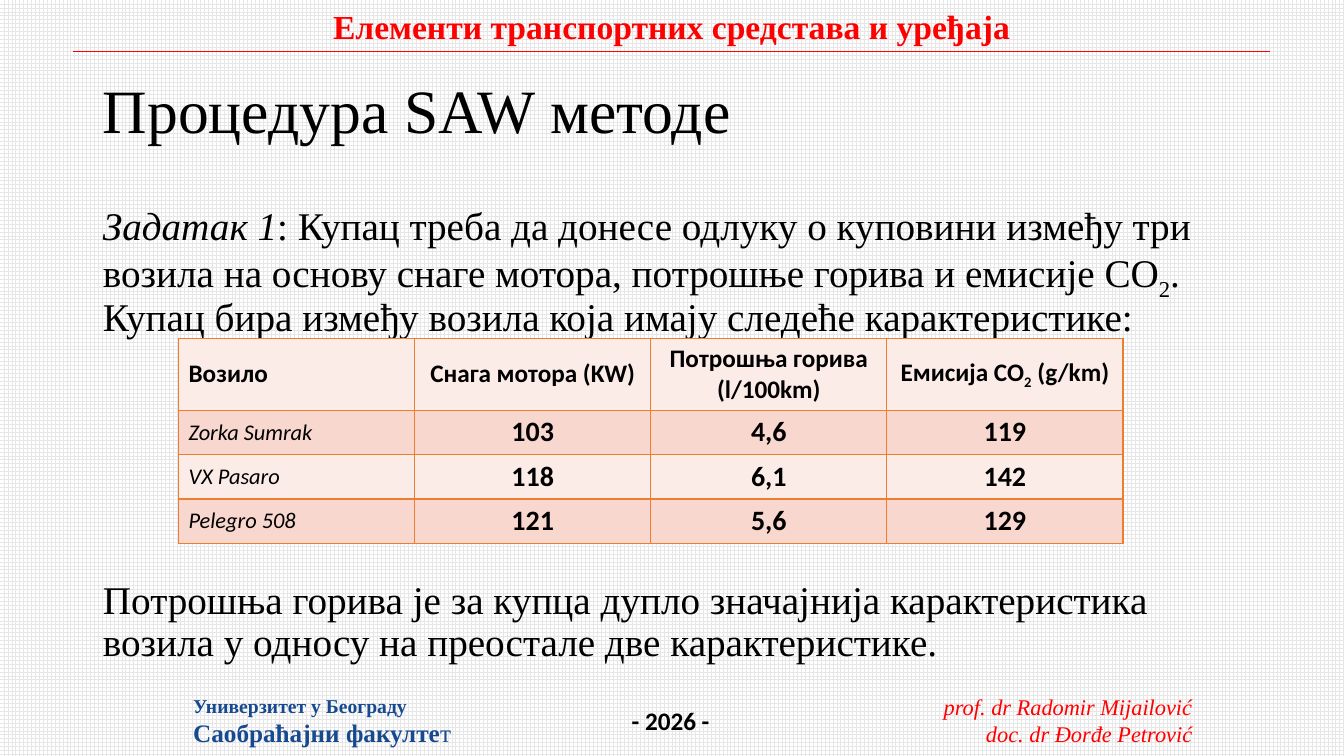
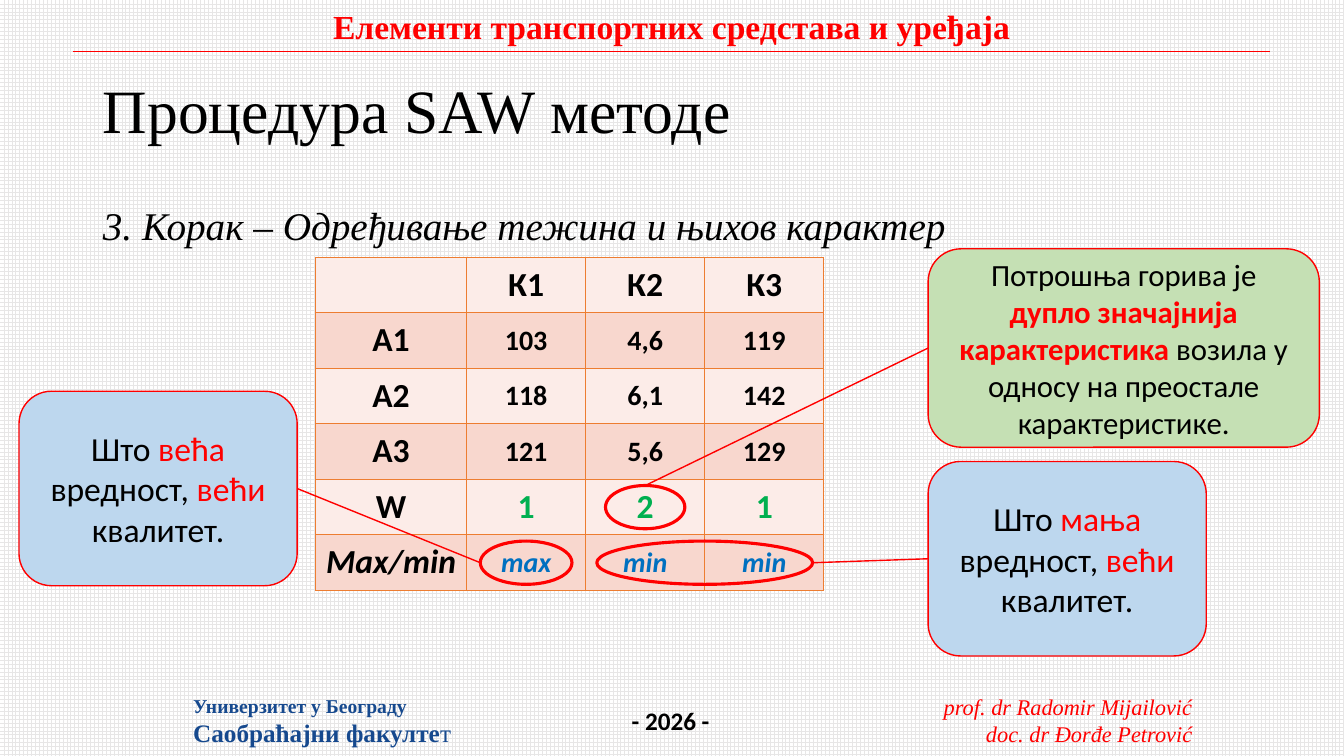
from lxml import etree
from pptx import Presentation
from pptx.dml.color import RGBColor
from pptx.enum import dml, shapes as sh, text as tx
from pptx.oxml.ns import qn
from pptx.util import Cm, Pt

HUE = {
    "black": "000000", "white": "FFFFFF", "grid": "E7E6E6", "red": "FF0000",
    "navy": "16498E", "orange": "ED7D31", "pale": "FCECE8", "peach": "F8D7CE",
    "mint": "C5E0B4", "sky": "BDD7EE", "green": "00B050", "blue": "0070C0",
}
SERIF, SANS = "Times New Roman", "Calibri"
LEFT, MID, RIGHT = tx.PP_ALIGN.LEFT, tx.PP_ALIGN.CENTER, tx.PP_ALIGN.RIGHT


def hue(name):
    """Return the named colour."""
    return RGBColor.from_string(HUE[name])


def place(shape, box):
    """Move a shape to a box given in centimetres."""
    shape.left, shape.top, shape.width, shape.height = map(Cm, box)


def write(par, runs, align=LEFT, **base):
    """Add styled runs to a paragraph."""
    par.alignment = align
    for words, own in runs:
        look = {"face": SANS, "tone": "black", **base, **own}
        run = par.add_run()
        run.text = words
        font = run.font
        font.name, font.size = look["face"], Pt(look["size"])
        font.bold = look.get("bold", False)
        font.italic = look.get("ital", False)
        font.color.rgb = hue(look["tone"])
        if look.get("sub"):
            run._r.get_or_add_rPr().set("baseline", "-25000")


def label(slide, box, lines, align=LEFT, **base):
    """Add an unwrapped text box and return it."""
    shape = slide.shapes.add_textbox(*map(Cm, box))
    frame = shape.text_frame
    frame.word_wrap = False
    frame.auto_size = tx.MSO_AUTO_SIZE.SHAPE_TO_FIT_TEXT
    for i, runs in enumerate(lines):
        par = frame.add_paragraph() if i else frame.paragraphs[0]
        write(par, runs, align, **base)
    return shape


def link(slide, start, end, width=1):
    """Draw a red straight line between two points."""
    line = slide.shapes.add_connector(
        sh.MSO_CONNECTOR.STRAIGHT, *map(Cm, (*start, *end)))
    line.line.color.rgb = hue("red")
    line.line.width = Pt(width)
    etree.SubElement(line._element.spPr, qn("a:effectLst"))
    return line


def shell(layout):
    """Set the shared backdrop and placeholder boxes."""
    fill = layout.background.fill
    fill.patterned()
    fill.pattern = dml.MSO_PATTERN.LARGE_GRID
    fill.fore_color.rgb, fill.back_color.rgb = hue("grid"), hue("white")
    for ph in list(layout.placeholders):
        idx = ph.placeholder_format.idx
        if idx == 0:
            place(ph, (2.34, 1.02, 29.21, 3.68))
            ph.text_frame.vertical_anchor = tx.MSO_ANCHOR.MIDDLE
        elif idx == 1:
            place(ph, (2.34, 5.08, 29.21, 12.09))
        else:
            ph.element.getparent().remove(ph.element)


def bands(slide, layout):
    """Build the header and footer and hand them to the layout."""
    parts = [
        label(slide, (23.42, 17.35, 6.88, 1.63),
              [[("prof. dr Radomir Mijailović", {})],
               [("doc. dr Đorđe Petrović", {})]],
              RIGHT, face=SERIF, size=16, tone="red", ital=True),
        link(slide, (1.83, 1.3), (32, 1.3), 0.5),
        label(slide, (8.05, 0.03, 17.75, 1.27),
              [[("Елементи транспортних средстава и уређаја", {})]],
              MID, face=SERIF, size=24, tone="red", bold=True),
        label(slide, (15.67, 17.65, 2.49, 1.02), [[("- 2026 -", {})]],
              size=18, bold=True),
        label(slide, (4.62, 17.35, 7.09, 1.63),
              [[("Универзитет у Београду", {"size": 14})],
               [("Саобраћајни факулте", {}), ("т", {"bold": False})]],
              face=SERIF, size=18, tone="navy", bold=True),
    ]
    for part in parts:
        layout.shapes.element.append(part._element)


def page(deck, layout, body):
    """Add a slide with its title and body paragraphs."""
    slide = deck.slides.add_slide(layout)
    head = slide.shapes.title.text_frame.paragraphs[0]
    head.line_spacing = 0.9
    write(head, [("Процедура SAW методе", {})], face=SERIF, size=44)
    frame = slide.placeholders[1].text_frame
    frame.auto_size = tx.MSO_AUTO_SIZE.NONE
    for i, (gap, runs) in enumerate(body):
        par = frame.add_paragraph() if i else frame.paragraphs[0]
        props = par._p.get_or_add_pPr()
        props.set("marL", "0")
        props.set("indent", "0")
        etree.SubElement(props, qn("a:buNone"))
        par.line_spacing, par.space_before = 0.9, Pt(gap)
        write(par, runs, face=SERIF, size=28)
    return slide


def edge(cell):
    """Draw thin orange borders round a cell."""
    props = cell._tc.get_or_add_tcPr()
    for i, side in enumerate("LRTB"):
        line = etree.Element(qn("a:ln" + side), w="12700")
        fill = etree.SubElement(line, qn("a:solidFill"))
        etree.SubElement(fill, qn("a:srgbClr"), val=HUE["orange"])
        props.insert(i, line)


def grid(slide, spot, cols, rows, data, style):
    """Add a striped table; style gives alignment and look by cell."""
    box = (*spot, sum(cols), sum(rows))
    table = slide.shapes.add_table(
        len(rows), len(cols), *map(Cm, box)).table
    table.first_row = table.horz_banding = False
    for col, wide in zip(table.columns, cols):
        col.width = Cm(wide)
    for r, (row, tall) in enumerate(zip(table.rows, rows)):
        row.height = Cm(tall)
        for c, cell in enumerate(row.cells):
            cell.fill.solid()
            cell.fill.fore_color.rgb = hue("peach" if r % 2 else "pale")
            edge(cell)
            cell.vertical_anchor = tx.MSO_ANCHOR.MIDDLE
            item = data[r][c]
            runs = [(item, {})] if isinstance(item, str) else item
            if item:
                align, look = style(r, c)
                write(cell.text_frame.paragraphs[0], runs, align, **look)


def cars(r, c):
    """Style the vehicle table."""
    align = MID if c else LEFT
    if r == 0:
        return align, {"size": 18, "bold": True}
    if c == 0:
        return align, {"size": 16, "ital": True}
    return align, {"size": 20, "bold": True}


def marks(r, c):
    """Style the criteria table."""
    look = {"size": 24, "bold": True, "ital": r == 5}
    if c and r in (1, 2, 3, 5):
        look["size"] = 20
    if c and r > 3:
        look["tone"] = "green" if r == 4 else "blue"
    return MID, look


def ring(slide, mid, wide):
    """Circle a spot in red."""
    tall = 1.09
    box = (mid[0] - wide / 2, mid[1] - tall / 2, wide, tall)
    oval = slide.shapes.add_shape(sh.MSO_SHAPE.OVAL, *map(Cm, box))
    oval.shadow.inherit = False
    oval.fill.background()
    oval.line.color.rgb, oval.line.width = hue("red"), Pt(2.25)
    return oval


def bubble(slide, box, tone, runs, size):
    """Add a rounded callout."""
    shape = slide.shapes.add_shape(
        sh.MSO_SHAPE.ROUNDED_RECTANGLE, *map(Cm, box))
    shape.shadow.inherit = False
    shape.fill.solid()
    shape.fill.fore_color.rgb = hue(tone)
    shape.line.color.rgb, shape.line.width = hue("red"), Pt(1)
    frame = shape.text_frame
    frame.word_wrap = True
    frame.vertical_anchor = tx.MSO_ANCHOR.MIDDLE
    write(frame.paragraphs[0], runs, MID, size=size)
    return shape


def rule(word):
    """Return the runs of a quality rule."""
    red = {"tone": "red"}
    return [("Што ", {}), (word, red), (" вредност, ", {}),
            ("већи", red), (" квалитет.", {})]


def task(deck, layout):
    """Build the task slide."""
    sub = ("2", {"sub": True})
    slide = page(deck, layout, [
        (0, [("Задатак 1", {"ital": True}),
             (": Купац треба да донесе одлуку о куповини између три возила "
              "на основу снаге мотора, потрошње горива и емисије CO", {}),
             sub,
             (". Купац бира између возила која имају следеће "
              "карактеристике:", {})]),
        (172, [("Потрошња горива је за купца дупло значајнија карактеристика "
                "возила у односу на преостале две карактеристике.", {})]),
    ])
    grid(slide, (4.5, 8.53), [5.95] * 4, [1.75] + [1.11] * 3, [
        ["Возило", "Снага мотора (KW)", "Потрошња горива (l/100km)",
         [("Емисија CO", {}), sub, (" (g/km)", {})]],
        ["Zorka Sumrak", "103", "4,6", "119"],
        ["VX Pasaro", "118", "6,1", "142"],
        ["Pelegro 508", "121", "5,6", "129"],
    ], cars)
    return slide


def step(deck, layout):
    """Build the weights slide with its callouts."""
    slide = page(deck, layout, [
        (0, [("3. Корак – Одређивање тежина и њихов карактер",
              {"ital": True})])])
    x, y, first, wide, tall = 7.95, 6.48, 3.81, 3, 1.4
    grid(slide, (x, y), [first] + [wide] * 3, [tall] * 6, [
        ["", "К1", "К2", "К3"],
        ["А1", "103", "4,6", "119"],
        ["А2", "118", "6,1", "142"],
        ["А3", "121", "5,6", "129"],
        ["W", "1", "2", "1"],
        ["Max/min", "max", "min", "min"],
    ], marks)

    def spot(r, c):
        """Return the middle of a value cell."""
        return x + first + wide * (c - 0.5), y + tall * (r + 0.5)

    top, low, pair = spot(4, 2), spot(5, 1), spot(5, 2.5)
    weight = ring(slide, top, 2)
    ring(slide, low, 2.31)
    ring(slide, pair, 5.44)
    double = bubble(slide, (23.39, 6.27, 9.86, 5), "mint", [
        ("Потрошња горива је ", {}),
        ("дупло значајнија карактеристика", {"tone": "red", "bold": True}),
        (" возила у односу на преостале карактеристике.", {})], 22)
    more = bubble(slide, (0.48, 9.86, 7.01, 4.9), "sky", rule("већа"), 24)
    less = bubble(slide, (23.39, 11.63, 7.01, 4.9), "sky", rule("мања"), 24)
    line = link(slide, top, top)
    line.begin_connect(weight, 0)
    line.end_connect(double, 1)
    left = (low[0] - 2.31 / 2, low[1])
    link(slide, left, left).end_connect(more, 3)
    right = (pair[0] + 5.44 / 2, pair[1])
    link(slide, right, right).end_connect(less, 1)


def main():
    """Build and save the deck."""
    deck = Presentation()
    deck.slide_width, deck.slide_height = Cm(33.87), Cm(19.05)
    layout = deck.slide_layouts[1]
    shell(layout)
    bands(task(deck, layout), layout)
    step(deck, layout)
    deck.save("out.pptx")


if __name__ == "__main__":
    main()
